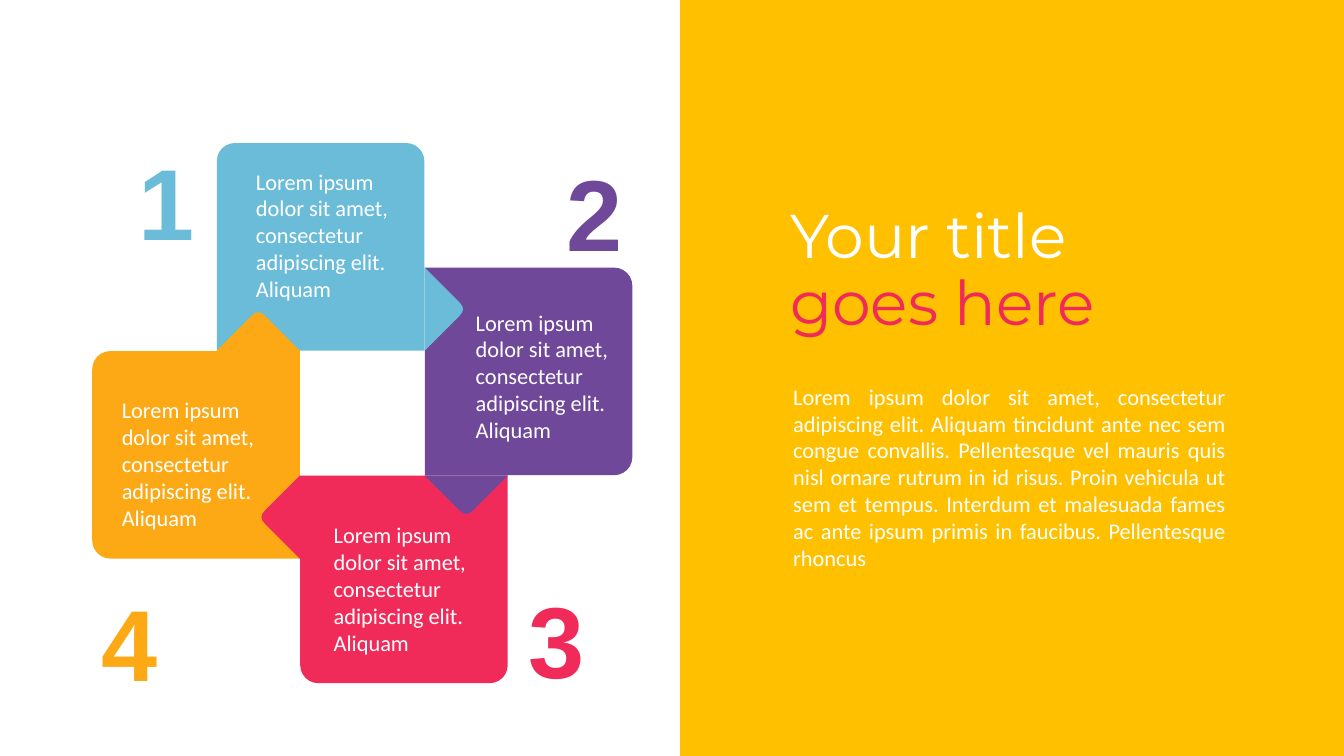
from pptx import Presentation
from pptx.dml.color import RGBColor
from pptx.enum.shapes import MSO_SHAPE as Kind
from pptx.enum.text import MSO_ANCHOR as Anchor, MSO_AUTO_SIZE as Fit, PP_ALIGN as Align
from pptx.util import Cm, Pt

WHITE, GOLD, PINK = "FFFFFF", "FFC000", "F02B59"
LOREM = "Lorem ipsum dolor sit amet, consectetur adipiscing elit. Aliquam"
STORY = LOREM + (
    " tincidunt ante nec sem congue convallis. Pellentesque vel mauris quis nisl"
    " ornare rutrum in id risus. Proin vehicula ut sem et tempus. Interdum et"
    " malesuada fames ac ante ipsum primis in faucibus. Pellentesque rhoncus"
)


def paint(shape, color):
    shape.fill.solid()
    shape.fill.fore_color.rgb = RGBColor.from_string(color)
    shape.line.fill.background()
    shape.shadow.inherit = False


def write(shape, text, font="Calibri", size=16, color=WHITE, bold=False,
          align=Align.LEFT, anchor=Anchor.TOP, inset=(0.25, 0.13)):
    """Add a run to the first paragraph and format its frame."""
    frame = shape.text_frame
    frame.word_wrap = True
    frame.auto_size = Fit.NONE
    frame.vertical_anchor = anchor
    frame.margin_left = frame.margin_right = Cm(inset[0])
    frame.margin_top = frame.margin_bottom = Cm(inset[1])
    para = frame.paragraphs[0]
    para.alignment = align
    run = para.add_run()
    run.text = text
    run.font.name, run.font.size, run.font.bold = font, Pt(size), bold
    run.font.color.rgb = RGBColor.from_string(color)


deck = Presentation()
deck.slide_width, deck.slide_height = Cm(33.87), Cm(19.05)
slide = deck.slides.add_slide(deck.slide_layouts[5])
shapes = slide.shapes

# Pinwheel: each step is a quarter turn about the hub, x + yj in cm
hub = 9.13 + 10.41j
side = 5.23
mid = -1.05 - 4.19j
base = 1.57 - 2.62j
tip = [-1.05j, 0.88 - 0.17j, 0.95 - 0.08j, 0.97, 0.95 + 0.08j, 0.88 + 0.17j, 1.05j]

# Colour, text corner, number corner
steps = [
    ("6BBCD9", (6.12, 4.04), (3.25, 3.4)),
    ("704899", (11.66, 7.59), (14.02, 3.68)),
    (PINK, (8.08, 12.95), (13.08, 14.43)),
    ("FDA915", (2.74, 9.8), (2.31, 14.5)),
]

for turn, (color, _, _) in enumerate(steps):
    spot = hub + mid * 1j ** turn
    card = shapes.add_shape(Kind.ROUND_2_SAME_RECTANGLE, Cm(spot.real - side / 2),
                            Cm(spot.imag - side / 2), Cm(side), Cm(side))
    card.adjustments[0] = 0.087
    card.rotation = 90 * turn
    paint(card, color)

for turn, (color, _, _) in enumerate(steps):
    spots = [hub + (base + dot) * 1j ** turn for dot in tip]
    first, *rest = [(Cm(spot.real), Cm(spot.imag)) for spot in spots]
    pen = shapes.build_freeform(*first)
    pen.add_line_segments(rest)
    paint(pen.convert_to_shape(), color)

for num, (color, (left, top), (x, y)) in enumerate(steps, 1):
    note = shapes.add_textbox(Cm(left), Cm(top), Cm(4.57), Cm(3.76))
    write(note, LOREM, anchor=Anchor.MIDDLE, inset=(0.33, 0.18))
    digit = shapes.add_textbox(Cm(x), Cm(y), Cm(1.75), Cm(3.33))
    write(digit, str(num), font="Arial", size=72, color=color, bold=True)

# Right half
panel = shapes.add_shape(Kind.RECTANGLE, Cm(17.14), 0, Cm(16.73), Cm(19.05))
paint(panel, GOLD)

title = shapes.title
panel.element.addnext(title.element)
title.left, title.top, title.width, title.height = Cm(19.66), Cm(5.05), Cm(10.46), Cm(5.21)
for text, color in (("Your title ", WHITE), ("goes here", PINK)):
    write(title, text, font="Montserrat", size=44, color=color)
title.text_frame.paragraphs[0].line_spacing = 0.9

story = shapes.add_textbox(Cm(19.66), Cm(9.45), Cm(11.56), Cm(5.13))
write(story, STORY, align=Align.JUSTIFY, anchor=Anchor.MIDDLE, inset=(0.33, 0.18))

deck.save("out.pptx")
